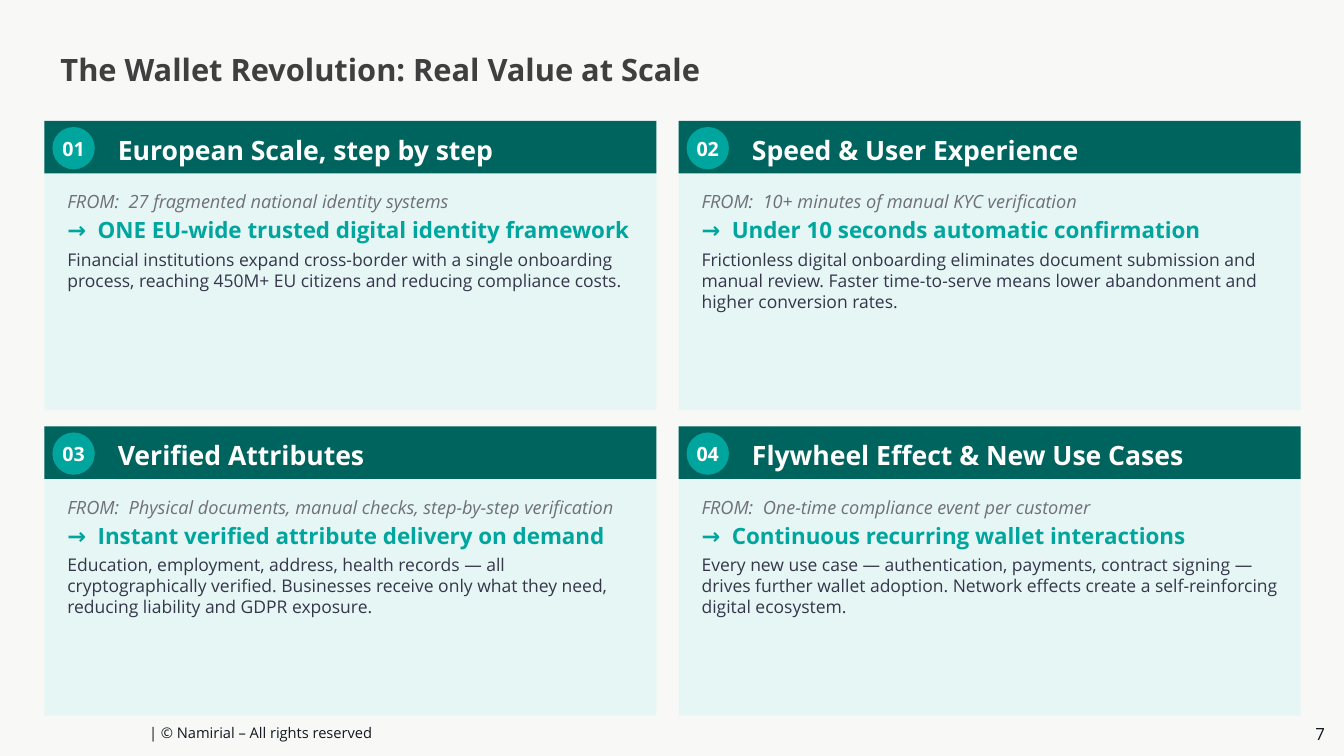
"""Build the wallet value slide: four numbered cards in a two by two grid."""
from dataclasses import dataclass
from itertools import product

from pptx import Presentation
from pptx.dml.color import RGBColor
from pptx.enum.shapes import MSO_SHAPE
from pptx.enum.text import MSO_ANCHOR, PP_ALIGN
from pptx.shapes.autoshape import Shape
from pptx.slide import Slide
from pptx.text.text import TextFrame
from pptx.util import Inches, Pt

COLORS = {
    "background": "F8F8F7",
    "title": "403F40",
    "footer": "111820",
    "card": "E5F6F5",
    "header": "00645E",
    "accent": "00A69D",
    "white": "FFFFFF",
    "before": "707079",
    "detail": "35364A",
}

FORMATS = {
    "title": {"size": Pt(22), "bold": True},
    "footer": {"size": Pt(10.5)},
    "page": {"size": Pt(12)},
    "number": {"size": Pt(14), "bold": True},
    "heading": {"size": Pt(19), "bold": True},
    "before": {"size": Pt(13), "italic": True},
    "after": {"size": Pt(16), "bold": True},
    "detail": {"size": Pt(12.5)},
}

COLUMNS = ((0.44, 6.07), (6.73, 6.17))
ROWS = (1.2, 4.23)
CARD_HEIGHT = 2.87
HEADER_HEIGHT = 0.52
BADGE_SIZE = 0.42


@dataclass(frozen=True)
class Line:
    """One paragraph with its format, colour and space before."""

    text: str
    style: str
    color: str
    space_before: float = 0
    alignment: PP_ALIGN = PP_ALIGN.LEFT


@dataclass(frozen=True)
class Box:
    """A rectangle on the slide in inches."""

    left: float
    top: float
    width: float
    height: float

    def lengths(self) -> tuple:
        """Return the position and size as lengths."""
        return tuple(Inches(value) for value in (self.left, self.top, self.width, self.height))


@dataclass(frozen=True)
class Card:
    """The wording of one card."""

    heading: str
    before: str
    after: str
    detail: str


CARDS = (
    Card(
        "European Scale, step by step",
        "27 fragmented national identity systems",
        "ONE EU-wide trusted digital identity framework",
        "Financial institutions expand cross-border with a single onboarding process, "
        "reaching 450M+ EU citizens and reducing compliance costs.",
    ),
    Card(
        "Speed & User Experience",
        "10+ minutes of manual KYC verification",
        "Under 10 seconds automatic confirmation",
        "Frictionless digital onboarding eliminates document submission and manual review. "
        "Faster time-to-serve means lower abandonment and higher conversion rates.",
    ),
    Card(
        "Verified Attributes",
        "Physical documents, manual checks, step-by-step verification",
        "Instant verified attribute delivery on demand",
        "Education, employment, address, health records — all cryptographically verified. "
        "Businesses receive only what they need, reducing liability and GDPR exposure.",
    ),
    Card(
        "Flywheel Effect & New Use Cases",
        "One-time compliance event per customer",
        "Continuous recurring wallet interactions",
        "Every new use case — authentication, payments, contract signing — drives further "
        "wallet adoption. Network effects create a self-reinforcing digital ecosystem.",
    ),
)


def write(frame: TextFrame, lines: list[Line], anchor: MSO_ANCHOR, margin: float | None = None) -> None:
    """Fill a text frame with formatted paragraphs."""
    frame.word_wrap = True
    frame.vertical_anchor = anchor
    if margin is not None:
        for side in ("left", "top", "right", "bottom"):
            setattr(frame, f"margin_{side}", Inches(margin))
    for index, line in enumerate(lines):
        paragraph = frame.add_paragraph() if index else frame.paragraphs[0]
        paragraph.text = line.text
        paragraph.alignment = line.alignment
        paragraph.space_before = Pt(line.space_before)
        font = paragraph.runs[0].font
        font.name = "Open Sans"
        font.color.rgb = RGBColor.from_string(COLORS[line.color])
        for name, value in FORMATS[line.style].items():
            setattr(font, name, value)


def add_filled(slide: Slide, kind: MSO_SHAPE, box: Box, color: str) -> Shape:
    """Add a flat shape without an outline."""
    shape = slide.shapes.add_shape(kind, *box.lengths())
    shape.shadow.inherit = False
    shape.fill.solid()
    shape.fill.fore_color.rgb = RGBColor.from_string(COLORS[color])
    shape.line.fill.background()
    return shape


def add_text(slide: Slide, box: Box, lines: list[Line], anchor: MSO_ANCHOR, margin: float | None = None) -> None:
    """Add a text box."""
    write(slide.shapes.add_textbox(*box.lengths()).text_frame, lines, anchor, margin)


def add_card(slide: Slide, number: int, card: Card, left: float, top: float, width: float) -> None:
    """Add a card with its header bar, number badge and text."""
    add_filled(slide, MSO_SHAPE.RECTANGLE, Box(left, top, width, CARD_HEIGHT), "card")
    add_filled(slide, MSO_SHAPE.RECTANGLE, Box(left, top, width, HEADER_HEIGHT), "header")
    badge_box = Box(left + 0.08, top + 0.06, BADGE_SIZE, BADGE_SIZE)
    badge = add_filled(slide, MSO_SHAPE.OVAL, badge_box, "accent")
    label = Line(f"{number:02}", "number", "white", alignment=PP_ALIGN.CENTER)
    write(badge.text_frame, [label], MSO_ANCHOR.MIDDLE, 0)
    heading_box = Box(left + 0.63, top + 0.09, width - 0.72, 0.39)
    add_text(slide, heading_box, [Line(card.heading, "heading", "white")], MSO_ANCHOR.MIDDLE)
    lines = [
        Line(f"FROM:  {card.before}", "before", "before"),
        Line(f"→  {card.after}", "after", "accent", 3),
        Line(card.detail, "detail", "detail", 4),
    ]
    add_text(slide, Box(left + 0.13, top + 0.64, width - 0.26, 2.18), lines, MSO_ANCHOR.TOP)


def main() -> None:
    """Build and save the presentation."""
    presentation = Presentation()
    presentation.slide_width = Inches(13.33)
    presentation.slide_height = Inches(7.5)
    slide = presentation.slides.add_slide(presentation.slide_layouts[5])
    slide.background.fill.solid()
    slide.background.fill.fore_color.rgb = RGBColor.from_string(COLORS["background"])

    title = slide.shapes.title
    title.left, title.top, title.width, title.height = Box(0.5, 0.45, 12.22, 0.48).lengths()
    heading = Line("The Wallet Revolution: Real Value at Scale", "title", "title")
    write(title.text_frame, [heading], MSO_ANCHOR.MIDDLE)

    for number, (card, (top, (left, width))) in enumerate(zip(CARDS, product(ROWS, COLUMNS)), 1):
        add_card(slide, number, card, left, top, width)

    footer = Line("| © Namirial – All rights reserved", "footer", "footer")
    add_text(slide, Box(1.48, 7.17, 6.67, 0.2), [footer], MSO_ANCHOR.MIDDLE, 0)
    page = Line("7", "page", "footer", alignment=PP_ALIGN.RIGHT)
    add_text(slide, Box(12.37, 7.15, 0.77, 0.26), [page], MSO_ANCHOR.MIDDLE, 0)
    presentation.save("out.pptx")


if __name__ == "__main__":
    main()
